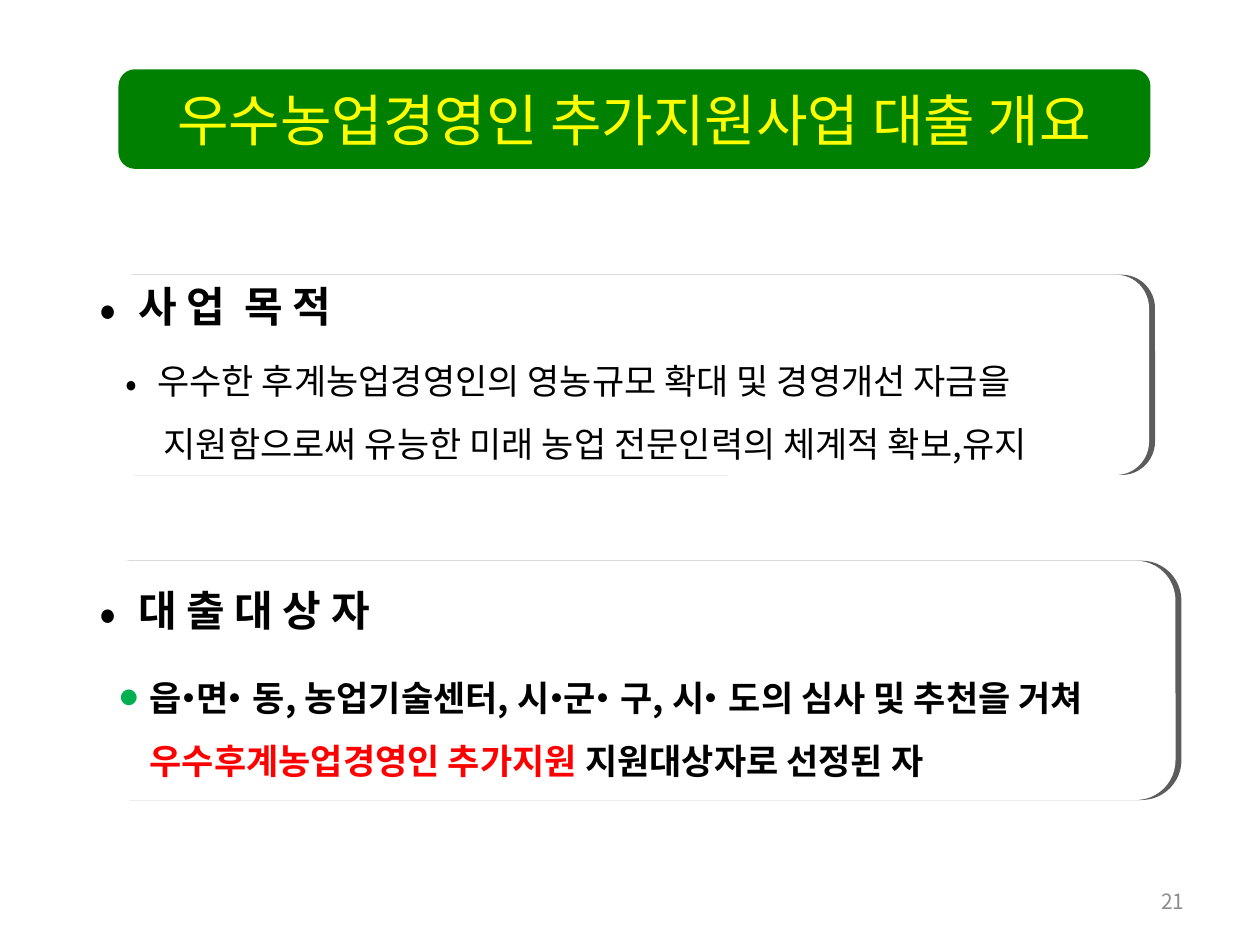
"""Build the slide outlining loans for outstanding farm managers."""
from pptx import Presentation
from pptx import oxml
from pptx import util as u
from pptx.dml.color import RGBColor
from pptx.enum import shapes, text
from pptx.oxml.ns import nsdecls, qn

FONT = "Noto Sans CJK KR"
BLACK = RGBColor(0, 0, 0)
WHITE = RGBColor(255, 255, 255)
GREEN = RGBColor(0, 128, 0)
YELLOW = RGBColor(255, 255, 0)
RED = RGBColor(255, 0, 0)
GRAY = RGBColor(0x8C, 0x8C, 0x8C)
BULLET_GREEN = RGBColor(0, 0xB0, 0x50)
DOT_TIGHTENING = -6

TITLE = "우수농업경영인 추가지원사업 대출 개요"
TITLE_AREA = (0.94, 0.55, 8.19, 0.79)
PAGE_NUMBER = "21"
PAGE_NUMBER_AREA = (7.17, 6.95, 2.33, 0.4)

SECTIONS = [
    {
        "panel": (0.75, 2.18, 8.37, 1.59),
        "heading": "사 업  목 적",
        "heading_area": (0.69, 2.18, 3.28, 0.5),
        "body_area": (0.9, 2.64, 8.59, 1.11),
        "bullet": ("•", BLACK, 100),
        "bold": False,
        "indents": (0.25, 0.3),
        "lines": [
            [("우수한 후계농업경영인의 영농규모 확대 및 경영개선 자금을", BLACK)],
            [("지원함으로써 유능한 미래 농업 전문인력의 체계적 확보,유지", BLACK)],
        ],
    },
    {
        "panel": (0.67, 4.45, 8.66, 1.9),
        "heading": "대 출 대 상 자",
        "heading_area": (0.69, 4.59, 2.81, 0.5),
        "body_area": (0.86, 5.15, 8.91, 1.41),
        "bullet": ("●", BULLET_GREEN, 50),
        "bold": True,
        "indents": (0.23, 0.23),
        "lines": [
            [
                ("읍•면•", BLACK),
                ("동, 농업기술센터, ", BLACK),
                ("시•군•", BLACK),
                ("구, ", BLACK),
                ("시•", BLACK),
                ("도의 심사 및 추천을 거쳐", BLACK),
            ],
            [("우수후계농업경영인 추가지원", RED), (" 지원대상자로 선정된 자", BLACK)],
        ],
    },
]


def xml(tag, attributes="", children=""):
    return oxml.parse_xml(f"<a:{tag} {nsdecls('a')} {attributes}>{children}</a:{tag}>")


def inches(area):
    return [u.Inches(value) for value in area]


def write(para, spans, size, bold=False):
    para.font.size = u.Pt(size)
    para.font.bold = bold
    para.font.name = FONT
    para.font._element.append(xml("ea", f'typeface="{FONT}"'))
    for words, color in spans:
        span = para.add_run()
        span.text = words
        span.font.color.rgb = color
        if "•" in words:
            span.font._element.set("spc", str(DOT_TIGHTENING * 100))


def indent(para, margin, bullet=None, color=BLACK, percent=100):
    properties = para._p.get_or_add_pPr()
    properties.set("marL", str(u.Inches(margin)))
    properties.set("indent", str(-u.Inches(margin) if bullet else 0))
    if bullet:
        defaults = properties.find(qn("a:defRPr"))
        for mark in (
            xml("buClr", children=f'<a:srgbClr val="{color}"/>'),
            xml("buSzPct", f'val="{percent * 1000}"'),
            xml("buFont", f'typeface="{FONT}"'),
            xml("buChar", f'char="{bullet}"'),
        ):
            defaults.addprevious(mark)


def add_text(page, area):
    box = page.shapes.add_textbox(*inches(area))
    box.text_frame.word_wrap = True
    return box.text_frame


def add_panel(page, area, color):
    panel = page.shapes.add_shape(shapes.MSO_SHAPE.ROUNDED_RECTANGLE, *inches(area))
    panel.fill.solid()
    panel.fill.fore_color.rgb = color
    panel.line.fill.background()
    panel.shadow.inherit = False
    return panel


def add_shadow(panel):
    color = '<a:srgbClr val="000000"><a:alpha val="63000"/></a:srgbClr>'
    effects = panel._element.spPr.find(qn("a:effectLst"))
    effects.append(xml("outerShdw", f'blurRad="0" dist="{u.Pt(3.4)}" dir="0" rotWithShape="0"', color))


def add_section(page, section):
    add_shadow(add_panel(page, section["panel"], WHITE))
    heading = add_text(page, section["heading_area"]).paragraphs[0]
    write(heading, [(section["heading"], BLACK)], 24, True)
    indent(heading, 0.31, "•", percent=120)

    frame = add_text(page, section["body_area"])
    for number, (spans, margin) in enumerate(zip(section["lines"], section["indents"])):
        para = frame.add_paragraph() if number else frame.paragraphs[0]
        para.line_spacing = 1.5
        write(para, spans, 20, section["bold"])
        indent(para, margin, *(() if number else section["bullet"]))


def add_title(page):
    title = page.shapes.title
    title.left, title.top, title.width, title.height = inches(TITLE_AREA)
    banner = add_panel(page, TITLE_AREA, GREEN)
    title._element.addprevious(banner._element)
    frame = title.text_frame
    frame.word_wrap = False
    frame.auto_size = text.MSO_AUTO_SIZE.NONE
    frame.vertical_anchor = text.MSO_ANCHOR.MIDDLE
    para = frame.paragraphs[0]
    para.alignment = text.PP_ALIGN.CENTER
    write(para, [(TITLE, YELLOW)], 32)


def add_page_number(page):
    frame = add_text(page, PAGE_NUMBER_AREA)
    frame.vertical_anchor = text.MSO_ANCHOR.MIDDLE
    para = frame.paragraphs[0]
    para.alignment = text.PP_ALIGN.RIGHT
    write(para, [(PAGE_NUMBER, GRAY)], 12)


def main():
    deck = Presentation()
    deck.slide_width, deck.slide_height = u.Inches(10), u.Inches(7.5)
    page = deck.slides.add_slide(deck.slide_layouts[5])
    add_title(page)
    for section in SECTIONS:
        add_section(page, section)
    add_page_number(page)
    deck.save("out.pptx")


if __name__ == "__main__":
    main()
